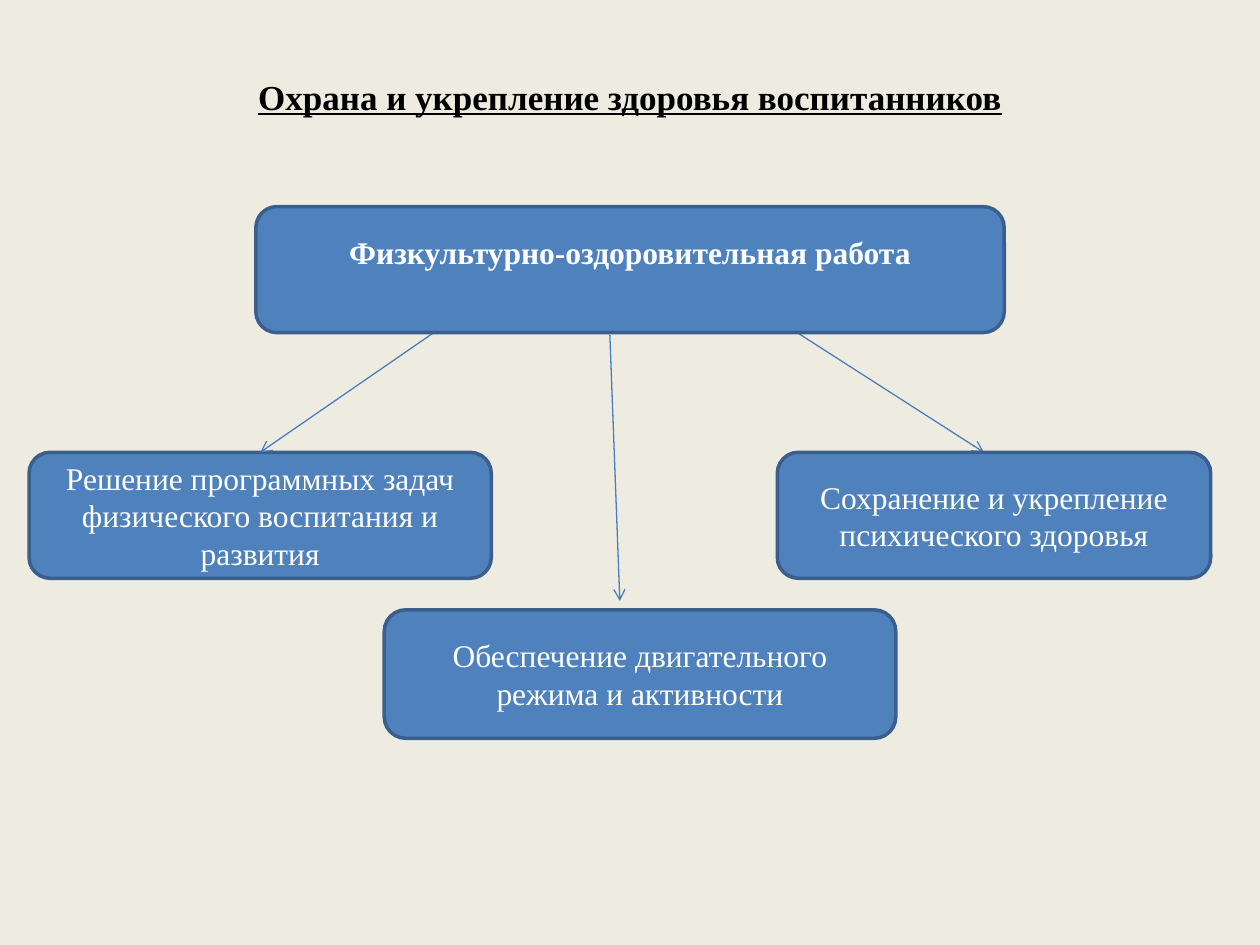
"""Build a slide on protecting and strengthening the health of pupils."""
import lxml.etree
import pptx
import pptx.dml.color
import pptx.enum.shapes
import pptx.enum.text
import pptx.oxml.ns
import pptx.util

Pt = pptx.util.Pt
FONT = "Times New Roman"
ROW_TOP = 258.5
BOX_HEIGHT = 72


def paint(color_owner, value):
    """Give a fill a solid colour from a hex string."""
    color_owner.solid()
    color_owner.fore_color.rgb = pptx.dml.color.RGBColor.from_string(value)


def write_text(shape, text, size, color, bold=False, underline=False, lift=0):
    """Write one centred paragraph, with extra room of lift points below it."""
    frame = shape.text_frame
    frame.word_wrap = True
    frame.vertical_anchor = pptx.enum.text.MSO_ANCHOR.MIDDLE
    frame.margin_bottom = Pt(3.6 + lift)
    paragraph = frame.paragraphs[0]
    paragraph.alignment = pptx.enum.text.PP_ALIGN.CENTER
    run = paragraph.add_run()
    run.text = text
    run.font.name = FONT
    run.font.size = Pt(size)
    run.font.bold = bold
    run.font.underline = underline
    paint(run.font.fill, color)


def add_title(slide, text):
    """Add the underlined heading."""
    shape = slide.shapes.add_textbox(Pt(36), Pt(21.6), Pt(648), Pt(90))
    write_text(shape, text, 20, "000000", bold=True, underline=True, lift=23)


def add_box(slide, text, left, top, width, height=BOX_HEIGHT, bold=False, lift=0):
    """Add a blue rounded box with white text and return it."""
    shape = slide.shapes.add_shape(
        pptx.enum.shapes.MSO_SHAPE.ROUNDED_RECTANGLE,
        Pt(left), Pt(top), Pt(width), Pt(height))
    shape.shadow.inherit = False
    paint(shape.fill, "4F81BD")
    paint(shape.line.fill, "3A5F8C")
    shape.line.width = Pt(2)
    write_text(shape, text, 18, "FFFFFF", bold=bold, lift=lift)
    return shape


def add_arrow(slide, start, end, target=None):
    """Add a thin arrow, joined to the top of the target box if one is given."""
    connector = slide.shapes.add_connector(
        pptx.enum.shapes.MSO_CONNECTOR.STRAIGHT, *map(Pt, start + end))
    if target is not None:
        connector.end_connect(target, 0)
    paint(connector.line.fill, "4B7EBC")
    connector.line.width = Pt(0.75)
    qualify = pptx.oxml.ns.qn
    properties = connector.element.spPr
    line = properties.find(qualify("a:ln"))
    lxml.etree.SubElement(line, qualify("a:tailEnd"), type="arrow")
    lxml.etree.SubElement(properties, qualify("a:effectLst"))


def main():
    """Build and save the slide."""
    presentation = pptx.Presentation()
    presentation.slide_width = Pt(720)
    presentation.slide_height = Pt(540)
    slide = presentation.slides.add_slide(presentation.slide_layouts[6])
    paint(slide.background.fill, "EEECE1")

    add_title(slide, "Охрана и укрепление здоровья воспитанников")
    tasks = add_box(slide, "Решение программных задач физического воспитания и развития",
                    16.6, ROW_TOP, 264.2)
    add_arrow(slide, (286.6, 163.4), (148.7, ROW_TOP), tasks)
    add_arrow(slide, (421.9, 168.5), (562.3, ROW_TOP))
    add_box(slide, "Физкультурно-оздоровительная работа",
            146.2, 118.1, 427.7, bold=True, lift=20.7)
    add_box(slide, "Обеспечение двигательного режима и активности",
            219.6, 348.5, 292.3, 73.4)
    add_arrow(slide, (348.5, 191.5), (354.2, 343.4))
    add_box(slide, "Сохранение и укрепление психического здоровья",
            444.2, ROW_TOP, 247.7)
    presentation.save("out.pptx")


if __name__ == "__main__":
    main()
